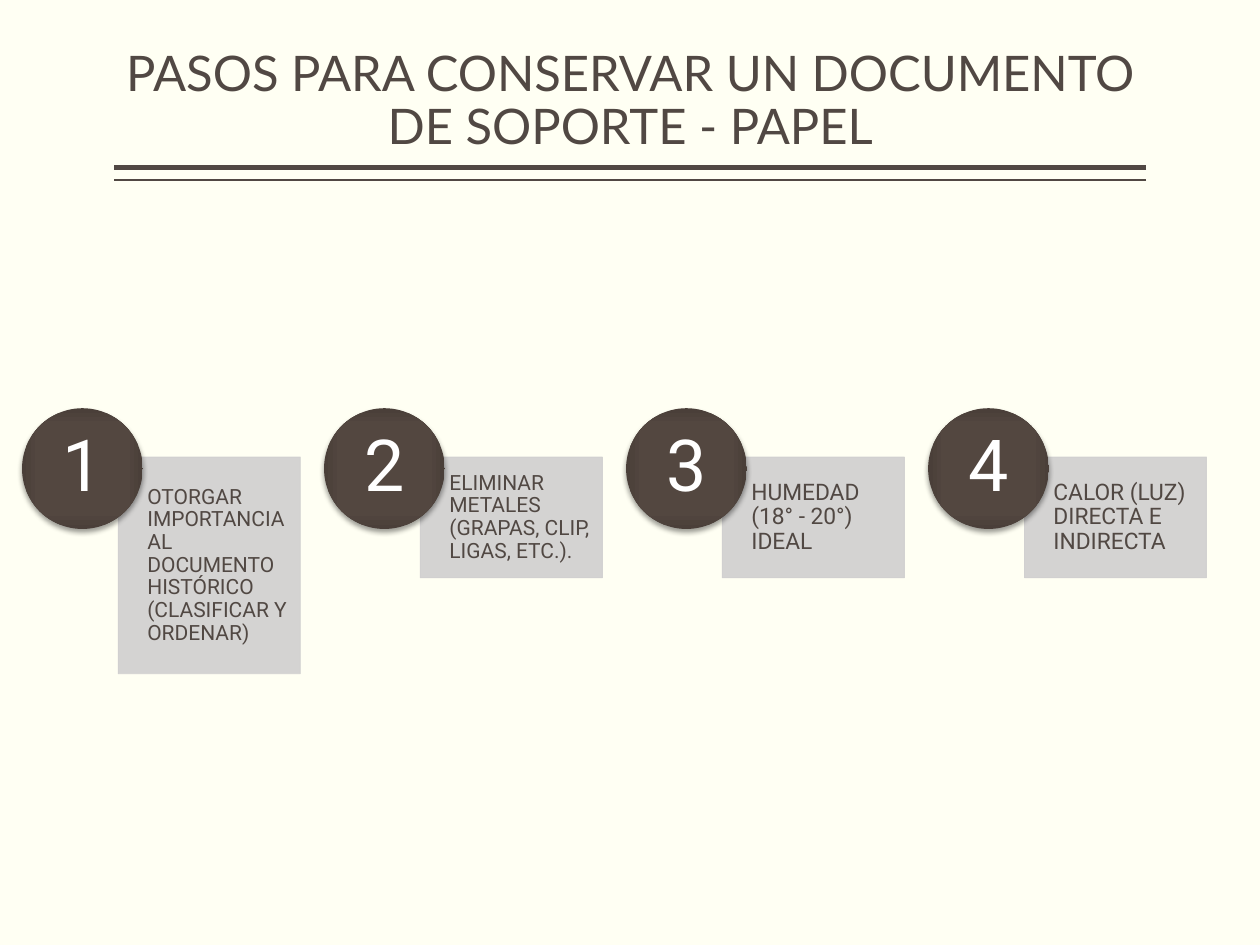
from dataclasses import dataclass

import pptx
import pptx.dml.color
import pptx.enum.shapes
import pptx.enum.text
import pptx.oxml
import pptx.util

Pt = pptx.util.Pt
RGB = pptx.dml.color.RGBColor.from_string
SHAPE = pptx.enum.shapes.MSO_SHAPE
ALIGN = pptx.enum.text.PP_ALIGN
ANCHOR = pptx.enum.text.MSO_ANCHOR
NS = 'xmlns:a="http://schemas.openxmlformats.org/drawingml/2006/main"'


@dataclass(frozen=True)
class Theme:
    background: str = "FFFFF3"
    ink: str = "514843"
    card: str = "D0CFCF"
    white: str = "FFFFFF"
    badge_stops: tuple = ((0, "544740"), (71, "534740"), (100, "4A3F39"))
    title_font: str = "Lato"
    body_font: str = "Roboto"
    title_size: int = 28
    number_size: int = 41
    large_size: int = 13
    small_size: int = 12


THEME = Theme()

STEPS = [
    ("OTORGAR IMPORTANCIA AL DOCUMENTO HISTÓRICO (CLASIFICAR Y ORDENAR)", THEME.small_size, 123.8),
    ("ELIMINAR METALES (GRAPAS, CLIP, LIGAS, ETC.).", THEME.small_size, 69),
    ("HUMEDAD (18° - 20°) IDEAL", THEME.large_size, 69),
    ("CALOR (LUZ) DIRECTA E INDIRECTA", THEME.large_size, 69),
]


def add_xml(parent, xml):
    parent.append(pptx.oxml.parse_xml(xml))


def add_text(s, text, box, size, font=THEME.body_font, color=THEME.ink,
             align=ALIGN.LEFT, anchor=ANCHOR.MIDDLE, insets=(0, 0, 0, 0)):
    tf = s.shapes.add_textbox(*map(Pt, box)).text_frame
    tf.word_wrap = True
    tf.vertical_anchor = anchor
    tf.margin_left, tf.margin_top, tf.margin_right, tf.margin_bottom = map(Pt, insets)
    p = tf.paragraphs[0]
    p.alignment = align
    p.line_spacing = 0.9
    r = p.add_run()
    r.text = text
    r.font.name = font
    r.font.size = Pt(size)
    r.font.color.rgb = RGB(color)


def add_header(s, x, y, w, h):
    add_text(s, "PASOS PARA CONSERVAR UN DOCUMENTO DE SOPORTE - PAPEL", (x, y, w, h),
             THEME.title_size, font=THEME.title_font, align=ALIGN.CENTER,
             anchor=ANCHOR.BOTTOM, insets=(0, 3.6, 0, 3.6))
    for gap, weight in ((3.6, 3), (10.6, 1)):
        line_y = Pt(y + h + gap)
        rule = s.shapes.add_connector(pptx.enum.shapes.MSO_CONNECTOR.STRAIGHT,
                                      Pt(x + w), line_y, Pt(x), line_y)
        rule.line.color.rgb = RGB(THEME.ink)
        rule.line.width = Pt(weight)
        add_xml(rule._element.spPr, f"<a:effectLst {NS}/>")


def add_card(s, x, y, w, h, text, size):
    sp = s.shapes.add_shape(SHAPE.RECTANGLE, Pt(x), Pt(y), Pt(w), Pt(h))
    sp.shadow.inherit = False
    sp.fill.solid()
    sp.fill.fore_color.rgb = RGB(THEME.card)
    sp.line.color.rgb = RGB(THEME.card)
    sp.line.width = Pt(0.5)
    for color in sp._element.spPr.xpath(".//a:srgbClr"):
        add_xml(color, f'<a:alpha {NS} val="90000"/>')
    indent = 16.6
    pad = size * 0.56
    add_text(s, text, (x + indent, y, w - indent, h), size, insets=(0, pad, pad, pad))


def add_badge(s, x, y, d, number):
    sp = s.shapes.add_shape(SHAPE.OVAL, Pt(x), Pt(y), Pt(d), Pt(d))
    sp.line.fill.background()
    stops = "".join(f'<a:gs pos="{pos * 1000}"><a:srgbClr val="{color}"/></a:gs>'
                    for pos, color in THEME.badge_stops)
    gradient = pptx.oxml.parse_xml(
        f'<a:gradFill {NS} rotWithShape="1"><a:gsLst>{stops}</a:gsLst><a:path path="rect">'
        '<a:fillToRect l="50000" t="50000" r="50000" b="50000"/></a:path></a:gradFill>')
    spPr = sp._element.spPr
    spPr.xpath("a:ln")[0].addprevious(gradient)
    add_xml(spPr, f'<a:effectLst {NS}><a:outerShdw blurRad="{Pt(3.1)}" dist="{Pt(2)}" '
                  'dir="5400000" rotWithShape="0"><a:srgbClr val="000000">'
                  '<a:alpha val="38000"/></a:srgbClr></a:outerShdw></a:effectLst>')
    inset = 10.1
    inner = d - 2 * inset
    add_text(s, str(number), (x + inset, y + inset, inner, inner), THEME.number_size,
             color=THEME.white, align=ALIGN.CENTER)


def add_steps(s, x, y, w):
    badge, card_w, dx, dy = 69, 104, 55, 27.9
    pitch = (w - dx - card_w) / (len(STEPS) - 1)
    for i, (text, size, card_h) in enumerate(STEPS):
        left = x + i * pitch
        add_card(s, left + dx, y + dy, card_w, card_h, text, size)
        add_badge(s, left, y, badge, i + 1)


def main():
    prs = pptx.Presentation()
    prs.slide_width, prs.slide_height = Pt(720), Pt(540)
    s = prs.slides.add_slide(prs.slide_layouts[6])
    s.background.fill.solid()
    s.background.fill.fore_color.rgb = RGB(THEME.background)
    add_header(s, 65.3, 5.8, 589.6, 86.4)
    add_steps(s, 12.6, 233.3, 676.8)
    prs.save("out.pptx")


if __name__ == "__main__":
    main()
